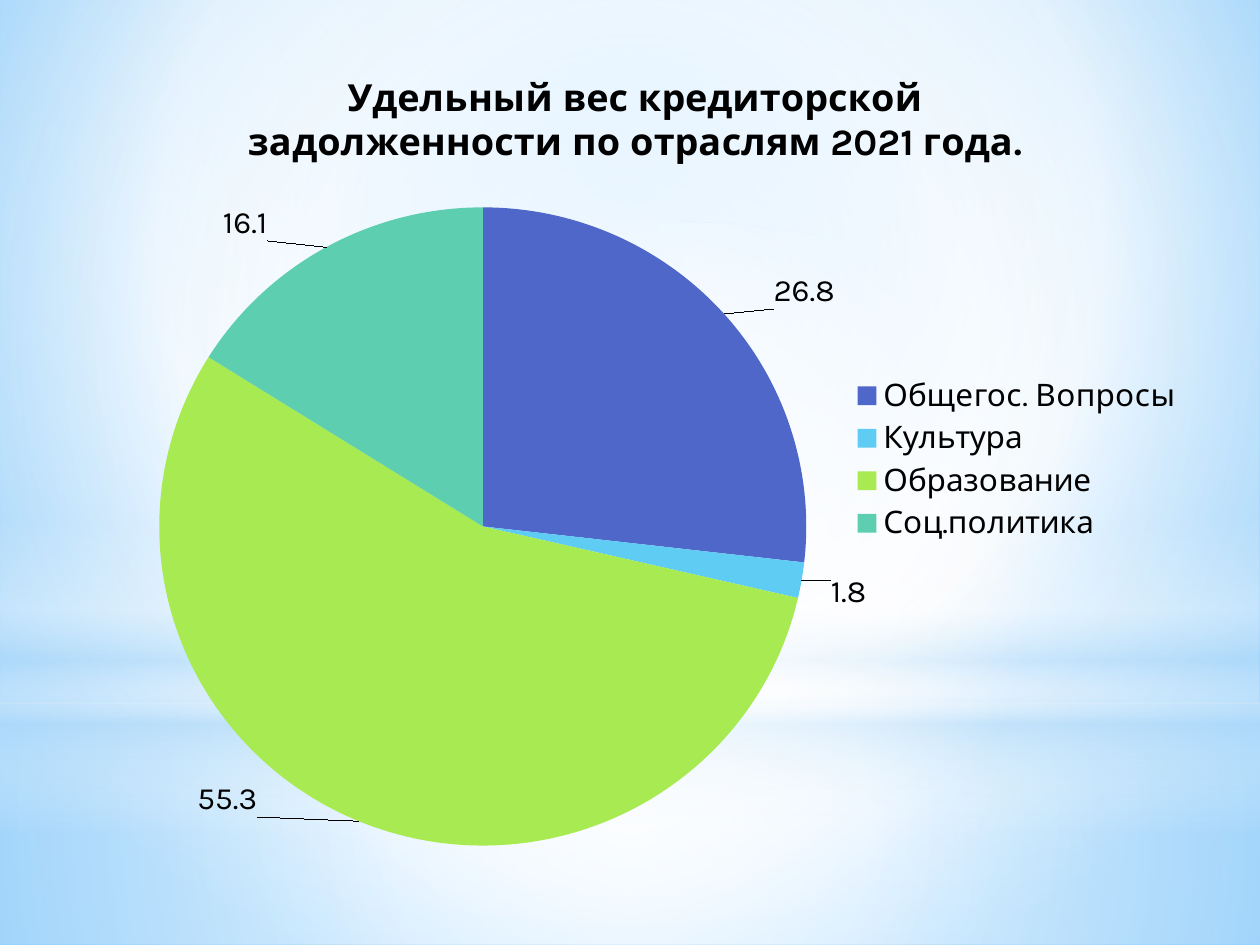
import pptx
import pptx.chart.data
import pptx.dml.color
import pptx.enum.chart
import pptx.enum.shapes
import pptx.oxml
import pptx.oxml.ns
import pptx.util

Inches, Pt = pptx.util.Inches, pptx.util.Pt
Shape = pptx.enum.shapes.MSO_SHAPE
Enum = pptx.enum.chart

COLORS = {
    "white": "FFFFFF", "pale": "B4DCFA", "sky": "9ED5FF", "deep": "5BB9FF",
    "text": "000000", "blue": "4E67C8", "cyan": "5ECCF3",
    "lime": "A7EA52", "teal": "5DCEAF",
}
CENTER = (50, 50, 50, 50)
EDGE = [("xMode", "edge"), ("yMode", "edge")]


def rgb(name):
    return pptx.dml.color.RGBColor.from_string(COLORS[name])


def layout(body):
    """Manual chart layout holding the given (tag, value) pairs."""
    ns = pptx.oxml.ns.nsdecls("c")
    tags = "".join(f'<c:{tag} val="{val}"/>' for tag, val in body)
    return pptx.oxml.parse_xml(
        f"<c:layout {ns}><c:manualLayout>{tags}</c:manualLayout></c:layout>")


def place(part, index, body):
    """Give a chart part its only layout, as child number index."""
    for old in part.xpath("./c:layout"):
        part.remove(old)
    part.insert(index, layout(body))


class Deck:
    font = "Karla"
    size = 18
    head = 21.6

    def __init__(self):
        self.prs = pptx.Presentation()
        self.prs.slide_width, self.prs.slide_height = Inches(10), Inches(7.5)
        self.slide = self.prs.slides.add_slide(self.prs.slide_layouts[6])

    def blend(self, owner, stops, rect=None):
        """Swap a solid fill for a gradient: circular with rect, else downward."""
        marks = "".join(
            f'<a:gs pos="{pos * 1000}"><a:srgbClr val="{COLORS[name]}">'
            f'<a:alpha val="{alpha * 1000}"/></a:srgbClr></a:gs>'
            for pos, name, alpha in stops)
        if rect:
            sides = " ".join(f'{s}="{v * 1000}"' for s, v in zip("ltrb", rect))
            kind = f'<a:path path="circle"><a:fillToRect {sides}/></a:path>'
        else:
            kind = '<a:lin ang="5400000" scaled="0"/>'
        grad = pptx.oxml.parse_xml(
            f'<a:gradFill {pptx.oxml.ns.nsdecls("a")} rotWithShape="1">'
            f"<a:gsLst>{marks}</a:gsLst>{kind}</a:gradFill>")
        old = owner.xpath(".//a:solidFill")[0]
        old.getparent().replace(old, grad)

    def back(self, stops, rect):
        self.slide.background.fill.solid()
        self.blend(self.slide.element, stops, rect)

    def glow(self, kind, box, stops, rect=None):
        shape = self.slide.shapes.add_shape(kind, *map(Inches, box))
        shape.shadow.inherit = False
        shape.line.fill.background()
        shape.fill.solid()
        self.blend(shape.element, stops, rect)

    def style(self, font, size, bold=False):
        font.name, font.size, font.bold = self.font, Pt(size), bold
        font.color.rgb = rgb("text")

    def pie(self, box, title, spot, plot_box, rows):
        data = pptx.chart.data.CategoryChartData()
        data.categories = [row[0] for row in rows]
        data.add_series("Series 1", [row[1] for row in rows])
        chart = self.slide.shapes.add_chart(
            Enum.XL_CHART_TYPE.PIE, *map(Inches, box), data).chart
        self.style(chart.font, self.size)

        # Title and legend
        chart.has_title = True
        run = chart.chart_title.text_frame.paragraphs[0].add_run()
        run.text = title
        self.style(run.font, self.head, True)
        chart.chart_title.include_in_layout = False
        place(chart.element.xpath(".//c:chart/c:title")[0], 1,
              [*EDGE, *zip("xy", spot)])
        chart.has_legend = True
        chart.legend.position = Enum.XL_LEGEND_POSITION.RIGHT
        chart.legend.include_in_layout = False
        self.style(chart.legend.font, self.size)

        # Plot area
        place(chart.element.xpath(".//c:plotArea")[0], 0,
              [("layoutTarget", "inner"), *EDGE, *zip("xywh", plot_box)])

        # Slices and their shifted labels
        plot = chart.plots[0]
        plot.vary_by_categories = True
        series = plot.series[0]
        labels = series.data_labels
        labels.show_value = True
        labels.position = Enum.XL_LABEL_POSITION.BEST_FIT
        self.style(labels.font, self.size)
        for i, row in enumerate(rows):
            point = series.points[i]
            point.format.fill.solid()
            point.format.fill.fore_color.rgb = rgb(row[2])
            point.format.line.fill.background()
            label = point.data_label
            label.position = Enum.XL_LABEL_POSITION.BEST_FIT
            self.style(label.font, self.size)
        for mark, row in zip(chart.element.xpath(".//c:dLbl"), rows):
            place(mark, 1, zip("xy", row[3]))


def main():
    deck = Deck()

    # Backdrop
    deck.back([(0, "sky", 100), (60, "white", 100), (100, "deep", 100)],
              (20, 10, 20, 60))
    deck.glow(Shape.RECTANGLE, (0, 5.58, 10, 1.92),
              [(0, "white", 91), (37, "white", 76), (100, "pale", 79)], CENTER)
    deck.glow(Shape.RECTANGLE, (0, 0, 10, 5.58),
              [(0, "white", 89), (48, "white", 62), (100, "pale", 79)], CENTER)
    deck.glow(Shape.RECTANGLE, (0, 4.12, 10, 2.5),
              [(0, "white", 0), (29, "white", 30), (45, "pale", 40),
               (55, "white", 26), (65, "pale", 60), (100, "white", 0)])
    deck.glow(Shape.OVAL, (0, 1.75, 10, 5.58),
              [(0, "white", 100), (56, "white", 0)], CENTER)

    # Debt share by sector: name, value, colour, label shift
    deck.pie(
        (0.78, 0.52, 8.72, 6.34),
        "Удельный вес кредиторской задолженности по отраслям 2021 года.",
        (0.13, 0),
        (0, 0.18, 0.7, 0.81),
        [("Общегос. Вопросы", 26.8, "blue", (0.04, 0)),
         ("Культура", 1.8, "cyan", (0.02, -0.01)),
         ("Образование", 55.3, "lime", (-0.09, -0.06)),
         ("Соц.политика", 16.1, "teal", (-0.05, 0))])

    deck.prs.save("out.pptx")


if __name__ == "__main__":
    main()
